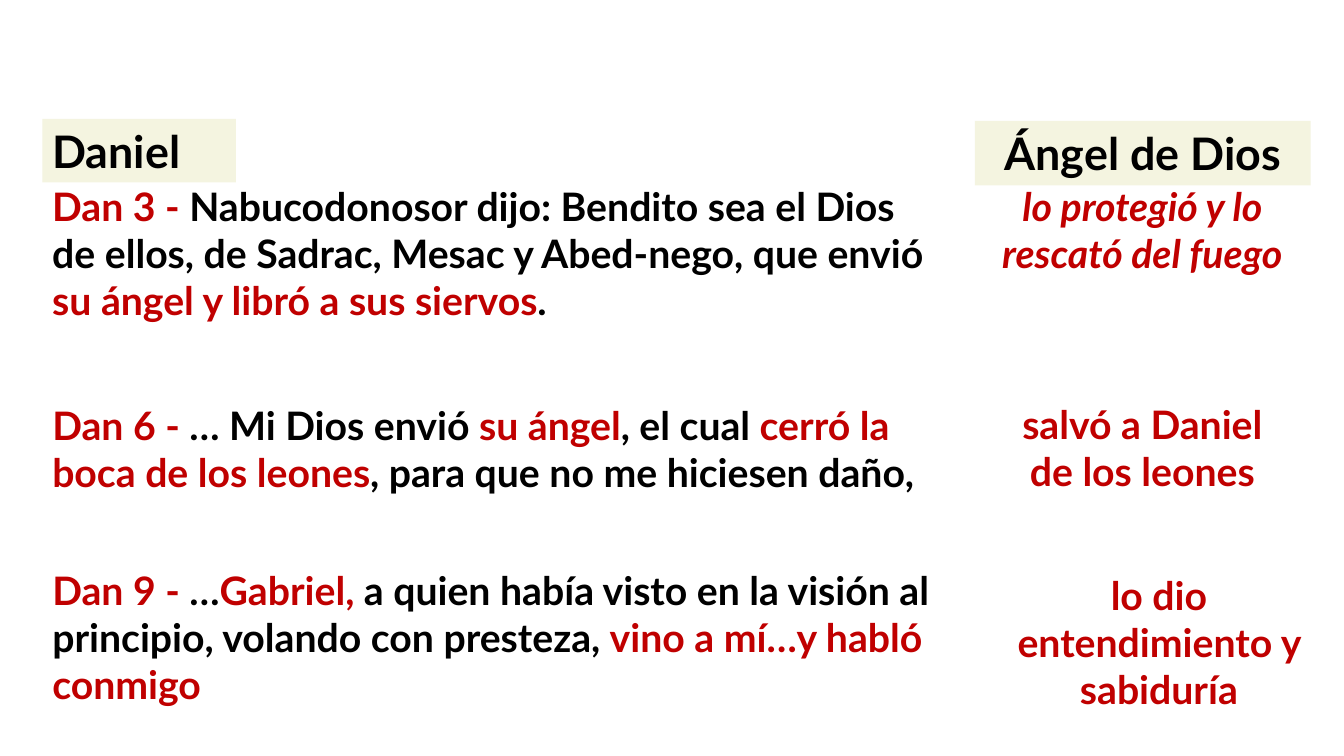
"""Build a slide pairing passages of Daniel with what the angel of God did."""
from dataclasses import dataclass

from pptx import Presentation
from pptx.dml.color import RGBColor
from pptx.enum.shapes import MSO_SHAPE
from pptx.enum.text import MSO_ANCHOR, PP_ALIGN
from pptx.util import Inches, Pt

RECTANGLE = MSO_SHAPE.RECTANGLE
TOP = MSO_ANCHOR.TOP
LEFT, CENTER = PP_ALIGN.LEFT, PP_ALIGN.CENTER


@dataclass(frozen=True)
class Theme:
    """Colours, font and type sizes of the slide."""
    font: str = "Lato"
    plain: RGBColor = RGBColor(0x00, 0x00, 0x00)
    accent: RGBColor = RGBColor(0xC0, 0x00, 0x00)
    band: RGBColor = RGBColor(0xF4, 0xF4, 0xE0)
    heading_size: int = 32
    body_size: int = 28


THEME = Theme()
PASSAGE_LEFT, ANGEL_LEFT = 0.42, 9.83

HEADINGS = [
    ("Daniel", (PASSAGE_LEFT, 1.18, 1.92, 0.63), LEFT),
    ("Ángel de Dios", (9.67, 1.2, 3.33, 0.64), CENTER),
]

# Segments alternate between accent and plain, starting with accent.
ROWS = [
    {
        "passage": ["Dan 3 - ",
                    "Nabucodonosor dijo: Bendito sea el Dios de ellos, de Sadrac, "
                    "Mesac y Abed-nego, que envió ",
                    "su ángel y libró a sus siervos", "."],
        "passage_top": 1.76, "passage_width": 9,
        "deed": "lo protegió y lo rescató del fuego",
        "deed_top": 1.76, "deed_width": 3, "deed_height": 1.51, "italic": True,
    },
    {
        "passage": ["Dan 6 - ", "… Mi Dios envió ", "su ángel", ", el cual ",
                    "cerró la boca de los leones",
                    ", para que no me hiciesen daño,"],
        "passage_top": 3.93, "passage_width": 8.92,
        "deed": "salvó a Daniel de los leones",
        "deed_top": 3.92, "deed_width": 3, "deed_height": 1.04, "italic": False,
    },
    {
        "passage": ["Dan 9 - ", "…", "Gabriel, ",
                    "a quien había visto en la visión al principio, "
                    "volando con presteza, ",
                    "vino a mí…y habló conmigo"],
        "passage_top": 5.57, "passage_width": 8.92,
        "deed": "lo dio entendimiento y sabiduría",
        "deed_top": 5.62, "deed_width": 3.33, "deed_height": 1.51, "italic": False,
    },
]
PASSAGE_HEIGHT = 1.51


def write(frame, segments, colors, size, align, italic=False):
    """Fill a text frame with bold segments in alternating colours."""
    frame.word_wrap = True
    frame.vertical_anchor = TOP
    paragraph = frame.paragraphs[0]
    paragraph.alignment = align
    for index, segment in enumerate(segments):
        run = paragraph.add_run()
        run.text = segment
        run.font.name = THEME.font
        run.font.size = Pt(size)
        run.font.bold = True
        run.font.italic = italic
        run.font.color.rgb = colors[index % len(colors)]


def add_heading(slide, title, box, align):
    """Add a column heading on its tinted band."""
    band = slide.shapes.add_shape(RECTANGLE, *map(Inches, box))
    band.shadow.inherit = False
    band.fill.solid()
    band.fill.fore_color.rgb = THEME.band
    band.line.fill.background()
    write(band.text_frame, [title], [THEME.plain], THEME.heading_size, align)


def add_body(slide, segments, box, align, italic=False):
    """Add a text box of passage or deed wording."""
    body = slide.shapes.add_textbox(*map(Inches, box))
    write(body.text_frame, segments, [THEME.accent, THEME.plain],
          THEME.body_size, align, italic)


def main():
    """Assemble and save the slide."""
    deck = Presentation()
    deck.slide_width, deck.slide_height = Inches(13.33), Inches(7.5)
    slide = deck.slides.add_slide(deck.slide_layouts[6])
    for title, box, align in HEADINGS:
        add_heading(slide, title, box, align)
    for row in ROWS:
        add_body(slide, row["passage"],
                 (PASSAGE_LEFT, row["passage_top"], row["passage_width"],
                  PASSAGE_HEIGHT), LEFT)
        add_body(slide, [row["deed"]],
                 (ANGEL_LEFT, row["deed_top"], row["deed_width"],
                  row["deed_height"]), CENTER, row["italic"])
    deck.save("out.pptx")


if __name__ == "__main__":
    main()
